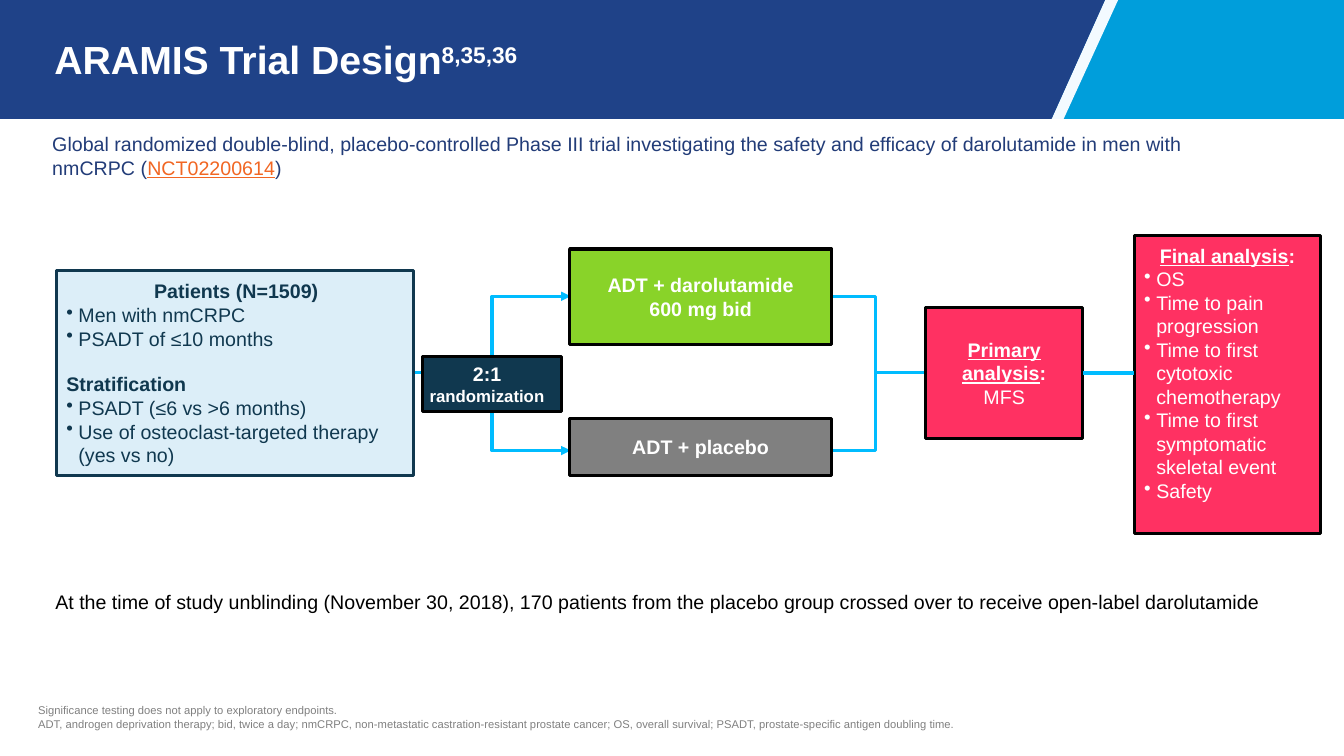
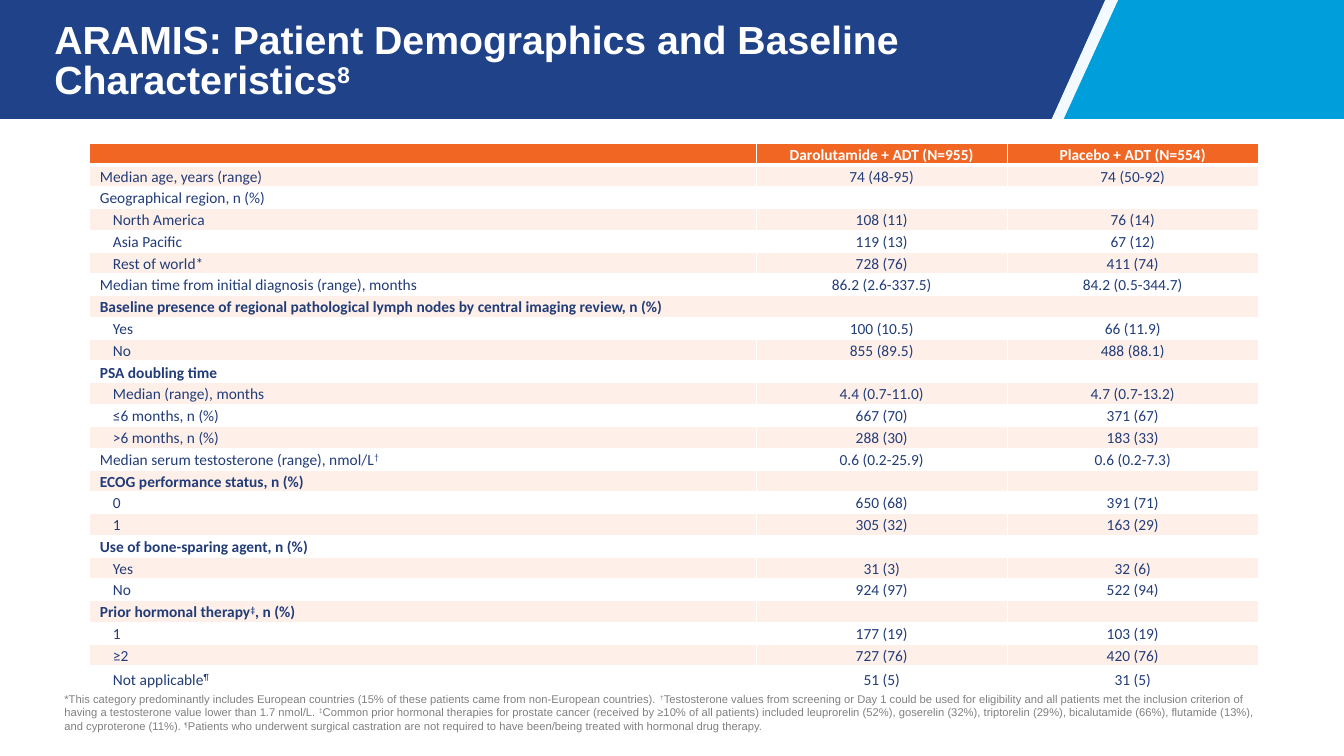
from dataclasses import dataclass

from lxml.etree import SubElement
from pptx import Presentation
from pptx.dml.color import RGBColor as Rgb
from pptx.enum.shapes import MSO_CONNECTOR as Conn, MSO_SHAPE as Kind
from pptx.enum.text import MSO_ANCHOR as Anchor, PP_ALIGN as Align
from pptx.oxml.ns import qn
from pptx.util import Pt

PX = 9144  # 100 px to the inch
WIDE, HIGH, BAND = 1333, 750, 118
INSET = (10, 5, 10, 5)
COLORS = {
    "white": "FFFFFF", "black": "000000", "blue": "1F4288", "sky": "009EDB",
    "ice": "F3FAFF", "navy": "223C78", "orange": "F16623", "peach": "FEF0E9",
    "gray": "808080", "pale": "DCEEF8", "ink": "10384F", "green": "89D329",
    "pink": "FF3162", "cyan": "00BCFF",
}


def rgb(name):
    return Rgb.from_string(COLORS[name])


@dataclass
class Para:
    """A paragraph; pieces between bars may start with ^ (raised), _ (underlined) or @ (link look)."""
    text: str
    bold: bool = False
    align: Align = Align.LEFT
    size: int = 14
    color: str = "white"
    font: str = "Arial"
    bullet: bool = False
    indent: int = 0
    before: int = 0
    lead: float = 1.0


class Deck:
    def __init__(self):
        self.prs = Presentation()
        self.prs.slide_width, self.prs.slide_height = WIDE * PX, HIGH * PX
        self.shapes = None

    def slide(self, title):
        """Start a slide with the shared band and its title."""
        self.shapes = self.prs.slides.add_slide(self.prs.slide_layouts[6]).shapes
        self.area("sky", [(1043, 0), (WIDE, 0), (WIDE, BAND), (1043, BAND)])
        self.area("ice", [(1096, 0), (1109, 0), (1055, BAND), (1043, BAND)])
        self.area("blue", [(0, 0), (1096, 0), (1043, BAND), (0, BAND)])
        head = Para(title, bold=True, size=28, lead=0.85)
        self.text(54, 14, 950, 97, [head], (0, 5, 10, 5), Anchor.MIDDLE)

    def area(self, color, dots):
        dots = [(x * PX, y * PX) for x, y in dots]
        pen = self.shapes.build_freeform(*dots[0])
        pen.add_line_segments(dots[1:], close=True)
        form = pen.convert_to_shape()
        form.shadow.inherit = False
        form.fill.solid()
        form.fill.fore_color.rgb = rgb(color)
        form.line.fill.background()

    def para(self, par, item):
        par.alignment = item.align
        par.line_spacing = item.lead
        if item.before:
            par.space_before = Pt(item.before)
        props = par._p.get_or_add_pPr()
        if item.bullet:
            props.set("marL", str(12 * PX))
            props.set("indent", str(-12 * PX))
            SubElement(props, qn("a:buChar"), char="•")
        elif item.indent:
            props.set("marL", str(item.indent * PX))
        font = par.font
        font.name, font.size, font.bold = item.font, Pt(item.size), item.bold
        font.color.rgb = rgb(item.color)
        for piece in filter(None, item.text.split("|")):
            run = par.add_run()
            mark = piece[0] if piece[0] in "^_@" else ""
            run.text = piece[len(mark):]
            if mark == "^":
                run._r.get_or_add_rPr().set("baseline", "30000")
            elif mark:
                run.font.underline = True
            if mark == "@":
                run.font.color.rgb = rgb("orange")
        if not item.text:
            SubElement(par._p, qn("a:endParaRPr"), sz=str(item.size * 100))

    def typeset(self, frame, items, inset, anchor):
        frame.word_wrap = True
        frame.vertical_anchor = anchor
        (frame.margin_left, frame.margin_top,
         frame.margin_right, frame.margin_bottom) = [v * PX for v in inset]
        for i, item in enumerate(items):
            self.para(frame.add_paragraph() if i else frame.paragraphs[0], item)

    def text(self, x, y, w, h, items, inset=INSET, anchor=Anchor.TOP):
        box = self.shapes.add_textbox(x * PX, y * PX, w * PX, h * PX)
        self.typeset(box.text_frame, items, inset, anchor)

    def box(self, x, y, w, h, fill, items, edge="black", inset=INSET):
        rect = self.shapes.add_shape(Kind.RECTANGLE, x * PX, y * PX, w * PX, h * PX)
        rect.shadow.inherit = False
        rect.fill.solid()
        rect.fill.fore_color.rgb = rgb(fill)
        rect.line.color.rgb = rgb(edge)
        rect.line.width = Pt(2.25)
        self.typeset(rect.text_frame, items, inset, Anchor.MIDDLE)
        return rect

    def link(self, kind, start, end, arrow=False):
        ends = [v * PX for v in (*start, *end)]
        wire = self.shapes.add_connector(kind, *ends)
        wire.line.color.rgb = rgb("cyan")
        wire.line.width = Pt(2.25)
        props = wire._element.spPr
        if arrow:
            SubElement(props.find(qn("a:ln")), qn("a:tailEnd"), type="triangle")
        SubElement(props, qn("a:effectLst"))
        return wire

    def cell(self, cell, item, fill, base):
        """Fill one table cell; base is the width of its bottom border."""
        cell.vertical_anchor = Anchor.MIDDLE
        cell.margin_left = cell.margin_right = 10 * PX
        cell.margin_top = cell.margin_bottom = PX
        props = cell._tc.get_or_add_tcPr()
        for side, width in zip("LRTB", (1, 1, 1, base)):
            edge = SubElement(props, qn("a:ln" + side), w=str(int(Pt(width))))
            SubElement(SubElement(edge, qn("a:solidFill")), qn("a:srgbClr"),
                       val=COLORS["white"])
        cell.fill.solid()
        cell.fill.fore_color.rgb = rgb(fill)
        self.para(cell.text_frame.paragraphs[0], item)

    def table(self, x, y, cols, tall, rows):
        """Rows hold (kind, label, value, value): h head, s section, w wide section, i indented, p plain."""
        grid = self.shapes.add_table(len(rows), len(cols), x * PX, y * PX,
                                     sum(cols) * PX, sum(tall) * PX).table
        grid.first_row = grid.horz_banding = False
        for col, wide in zip(grid.columns, cols):
            col.width = wide * PX
        for r, (kind, *texts) in enumerate(rows):
            grid.rows[r].height = tall[r] * PX
            top = kind == "h"
            fill = "orange" if top else "peach" if r % 2 else "white"
            for c in range(len(cols)):
                item = Para(texts[c] if c < len(texts) else "", bold=kind in "hsw",
                            align=Align.CENTER if c else Align.LEFT, size=11,
                            color="white" if top else "navy", font="Calibri",
                            indent=13 if kind == "i" and not c else 0, lead=1.07)
                self.cell(grid.cell(r, c), item, fill, 3 if top else 1)
            if kind == "w":
                grid.cell(r, 0).merge(grid.cell(r, len(cols) - 1))


def mid(text, bold=True, size=14, color="white"):
    return Para(text, bold, Align.CENTER, size, color)


def dots(color, *texts):
    return [Para(t, color=color, bullet=True) for t in texts]


def notes(*texts):
    return [Para(t, size=8, color="gray") for t in texts]


def design(deck):
    deck.slide("ARAMIS Trial Design|^8,35,36")
    deck.text(42, 126, 1160, 57, [Para(
        "Global randomized double-blind, placebo-controlled Phase III trial investigating "
        "the safety and efficacy of darolutamide in men with nmCRPC (|@NCT02200614|)",
        color="navy")])
    deck.text(28, 693, 1277, 37, notes(
        "Significance testing does not apply to exploratory endpoints.",
        "ADT, androgen deprivation therapy; bid, twice a day; nmCRPC, non-metastatic "
        "castration-resistant prostate cancer; OS, overall survival; PSADT, "
        "prostate-specific antigen doubling time."))

    axis = 370
    for arm in (294, 447):
        deck.link(Conn.ELBOW, (410, axis), (566, arm), arrow=True)
        deck.link(Conn.ELBOW, (819, arm), (918, axis))

    deck.box(56, 268, 354, 204, "pale", [
        mid("Patients (N=1509)", color="ink"),
        *dots("ink", "Men with nmCRPC", "PSADT of ≤10 months"),
        Para("Stratification", bold=True, color="ink", before=16),
        *dots("ink", "PSADT (≤6 vs >6 months)",
              "Use of osteoclast-targeted therapy (yes vs no)"),
    ], edge="ink", inset=(10, 7, 7, 7))
    deck.box(565, 247, 260, 95, "green", [mid("ADT + darolutamide"), mid("600 mg bid")])
    deck.box(565, 415, 260, 57, "gray", [mid("ADT + placebo")])
    deck.box(419, 354, 138, 54, "ink", [mid("2:1"), mid("randomization", size=12)],
             inset=(0, 5, 10, 5))
    deck.box(1125, 234, 185, 295, "pink", [
        mid("_Final analysis|:"),
        *dots("white", "OS", "Time to pain progression",
              "Time to first cytotoxic chemotherapy",
              "Time to first symptomatic skeletal event", "Safety"),
    ], inset=(10, 5, 10, 28))
    first = deck.box(918, 305, 156, 130, "pink",
                     [mid("_Primary analysis|:"), mid("MFS", bold=False)])
    deck.link(Conn.STRAIGHT, (1074, axis), (1125, axis)).begin_connect(first, 3)

    deck.text(45, 580, 1221, 34, [Para(
        "At the time of study unblinding (November 30, 2018), 170 patients from the "
        "placebo group crossed over to receive open-label darolutamide", color="black")])


def baseline(deck):
    deck.slide("ARAMIS: Patient Demographics and Baseline Characteristics|^8")
    deck.text(54, 682, 1213, 50, notes(
        "*This category predominantly includes European countries (15% of these patients "
        "came from non-European countries). |^†|Testosterone values from screening or Day 1 "
        "could be used for eligibility and all patients met the inclusion criterion of having "
        "a testosterone value lower than 1.7 nmol/L. |^‡|Common prior hormonal therapies for "
        "prostate cancer (received by ≥10% of all patients) included leuprorelin (52%), "
        "goserelin (32%), triptorelin (29%), bicalutamide (66%), flutamide (13%), and "
        "cyproterone (11%). |^¶|Patients who underwent surgical castration are not required "
        "to have been/being treated with hormonal drug therapy."))
    rows = [
        ("h", "", "Darolutamide + ADT (N=955)", "Placebo + ADT (N=554)"),
        ("p", "Median age, years (range)", "74 (48-95)", "74 (50-92)"),
        ("p", "Geographical region, n (%)"),
        ("i", "North America", "108 (11)", "76 (14)"),
        ("i", "Asia Pacific", "119 (13)", "67 (12)"),
        ("i", "Rest of world*", "728 (76)", "411 (74)"),
        ("p", "Median time from initial diagnosis (range), months",
         "86.2 (2.6-337.5)", "84.2 (0.5-344.7)"),
        ("w", "Baseline presence of regional pathological lymph nodes "
              "by central imaging review, n (%)"),
        ("i", "Yes", "100 (10.5)", "66 (11.9)"),
        ("i", "No", "855 (89.5)", "488 (88.1)"),
        ("s", "PSA doubling time"),
        ("i", "Median (range), months", "4.4 (0.7-11.0)", "4.7 (0.7-13.2)"),
        ("i", "≤6 months, n (%)", "667 (70)", "371 (67)"),
        ("i", ">6 months, n (%)", "288 (30)", "183 (33)"),
        ("p", "Median serum testosterone (range), nmol/L|^†",
         "0.6 (0.2-25.9)", "0.6 (0.2-7.3)"),
        ("s", "ECOG performance status, n (%)"),
        ("i", "0", "650 (68)", "391 (71)"),
        ("i", "1", "305 (32)", "163 (29)"),
        ("s", "Use of bone-sparing agent, n (%)"),
        ("i", "Yes", "31 (3)", "32 (6)"),
        ("i", "No", "924 (97)", "522 (94)"),
        ("s", "Prior hormonal therapy|^‡|, n (%)"),
        ("i", "1", "177 (19)", "103 (19)"),
        ("i", "≥2", "727 (76)", "420 (76)"),
        ("i", "Not applicable|^¶", "51 (5)", "31 (5)"),
    ]
    tall = [18] * (len(rows) - 1) + [26]
    deck.table(89, 142, (661, 249, 249), tall, rows)


def main():
    deck = Deck()
    design(deck)
    baseline(deck)
    deck.prs.save("out.pptx")


if __name__ == "__main__":
    main()
